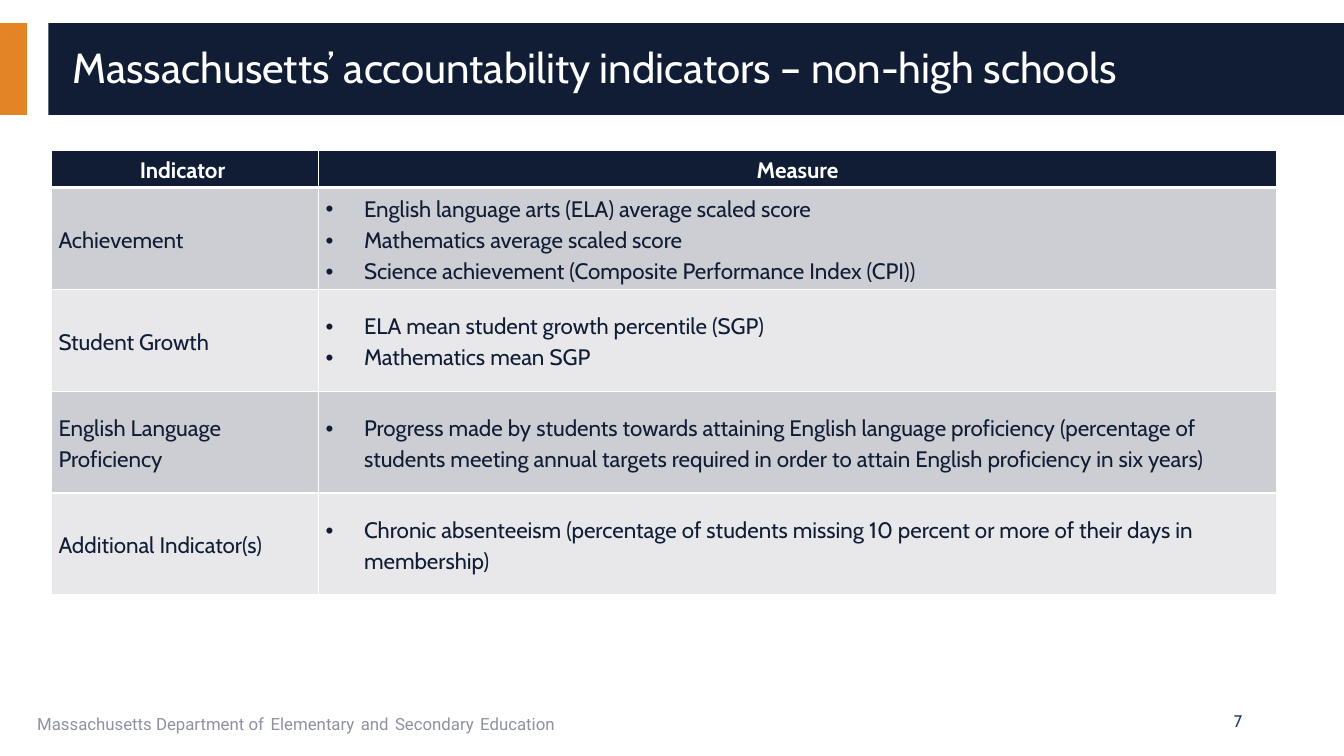
from lxml.etree import SubElement as Sub
from pptx import Presentation
from pptx.dml.color import RGBColor as RGB
from pptx.enum.shapes import MSO_SHAPE as Shape
from pptx.enum.text import MSO_ANCHOR as Anchor, PP_ALIGN as Align
from pptx.oxml.ns import qn
from pptx.util import Inches, Pt

theme = {
    "navy": "101D35", "orange": "E38526", "white": "FFFFFF",
    "blue": "203B6A", "grey": "8D92A1", "bands": ("CDCED4", "E8E8EB"),
    "main": "Cabin", "foot": "Roboto",
    "title": 30, "body": 16, "gap": 18, "small": 12,
}

deck = Presentation()
deck.slide_width, deck.slide_height = Inches(13.33), Inches(7.5)
slide = deck.slides.add_slide(deck.slide_layouts[6])
shapes = slide.shapes


def area(left, top, width, height):
    wide, high = deck.slide_width / 100, deck.slide_height / 100
    return [int(n) for n in (left * wide, top * high, width * wide, height * high)]


def style(font, size, color, face=theme["main"], bold=False):
    font.size, font.name, font.bold = Pt(theme[size]), face, bold
    font.color.rgb = RGB.from_string(theme[color])


for left, width, color in ((0, 2.03, "orange"), (3.6, 96.4, "navy")):
    bar = shapes.add_shape(Shape.RECTANGLE, *area(left, 3.07, width, 12.13))
    bar.shadow.inherit = False
    bar.fill.solid()
    bar.fill.fore_color.rgb = RGB.from_string(theme[color])
    bar.line.fill.background()

foot = shapes.add_textbox(*area(2.03, 92.67, 63.32, 5.33)).text_frame
foot.word_wrap = True
para = foot.paragraphs[0]
parts = ("Massachusetts Department of", "Elementary", "and", "Secondary", "Education")
for index, part in enumerate(parts):
    if index:
        gap = para.add_run()
        gap.text = " "
        style(gap.font, "gap", "blue", theme["foot"])
    run = para.add_run()
    run.text = part
    style(run.font, "small", "grey", theme["foot"])

labels = (
    ("Massachusetts’ accountability indicators – non-high schools",
     (4.65, 4.27, 93.32, 9.87), Align.LEFT, 0.9, "title", "white"),
    ("7", (70.67, 92.67, 22.5, 5.33), Align.RIGHT, 1.0, "small", "blue"),
)
for text, place, align, space, size, color in labels:
    frame = shapes.add_textbox(*area(*place)).text_frame
    frame.word_wrap = True
    frame.vertical_anchor = Anchor.MIDDLE
    para = frame.paragraphs[0]
    para.text, para.alignment, para.line_spacing = text, align, space
    style(para.font, size, color)

rows = (
    (["Indicator "], ["Measure"]),
    (["Achievement"],
     ["English language arts (ELA) average scaled score",
      "Mathematics average scaled score",
      "Science achievement (Composite Performance Index (CPI))"]),
    (["Student Growth"],
     ["ELA mean student growth percentile (SGP)", "Mathematics mean SGP"]),
    (["English Language", "Proficiency"],
     ["Progress made by students towards attaining English language proficiency "
      "(percentage of students meeting annual targets required in order to attain "
      "English proficiency in six years)"]),
    (["Additional Indicator(s)"],
     ["Chronic absenteeism (percentage of students missing 10 percent or more "
      "of their days in membership)"]),
)
table = shapes.add_table(len(rows), 2, *area(3.83, 19.87, 91.15, 58.81)).table
table.first_row = table.horz_banding = False
for column, share in zip(table.columns, (19.88, 71.27)):
    column.width = int(deck.slide_width * share / 100)

for y, row in enumerate(rows):
    head = y == 0
    table.rows[y].height = int(deck.slide_height * (4.93 if head else 13.47) / 100)
    for x, lines in enumerate(row):
        cell = table.cell(y, x)
        cell.vertical_anchor = Anchor.MIDDLE
        cell.margin_left = cell.margin_right = Inches(0.07)
        cell.margin_top = cell.margin_bottom = 0
        props = cell._tc.get_or_add_tcPr()
        for side in "LRTB":
            thick = (side == "B" and head) or (side == "T" and y == 1)
            edge = Sub(props, qn(f"a:ln{side}"), w=str(Pt(3 if thick else 1)))
            Sub(Sub(edge, qn("a:solidFill")), qn("a:srgbClr"), val=theme["white"])
        cell.fill.solid()
        cell.fill.fore_color.rgb = RGB.from_string(
            theme["navy"] if head else theme["bands"][(y - 1) % 2])
        cell.text = "\n".join(lines)
        for para in cell.text_frame.paragraphs:
            para.line_spacing = 1.15
            para.alignment = Align.CENTER if head else Align.LEFT
            if x and not head:
                form = para._p.get_or_add_pPr()
                form.set("marL", str(Inches(0.38)))
                form.set("indent", str(-Inches(0.38)))
                Sub(form, qn("a:buFont"), typeface="Arial")
                Sub(form, qn("a:buChar"), char="•")
                Sub(Sub(form, qn("a:tabLst")), qn("a:tab"), pos=str(Inches(0.36)), algn="l")
            style(para.font, "body", "white" if head else "navy", bold=head)

deck.save("out.pptx")
